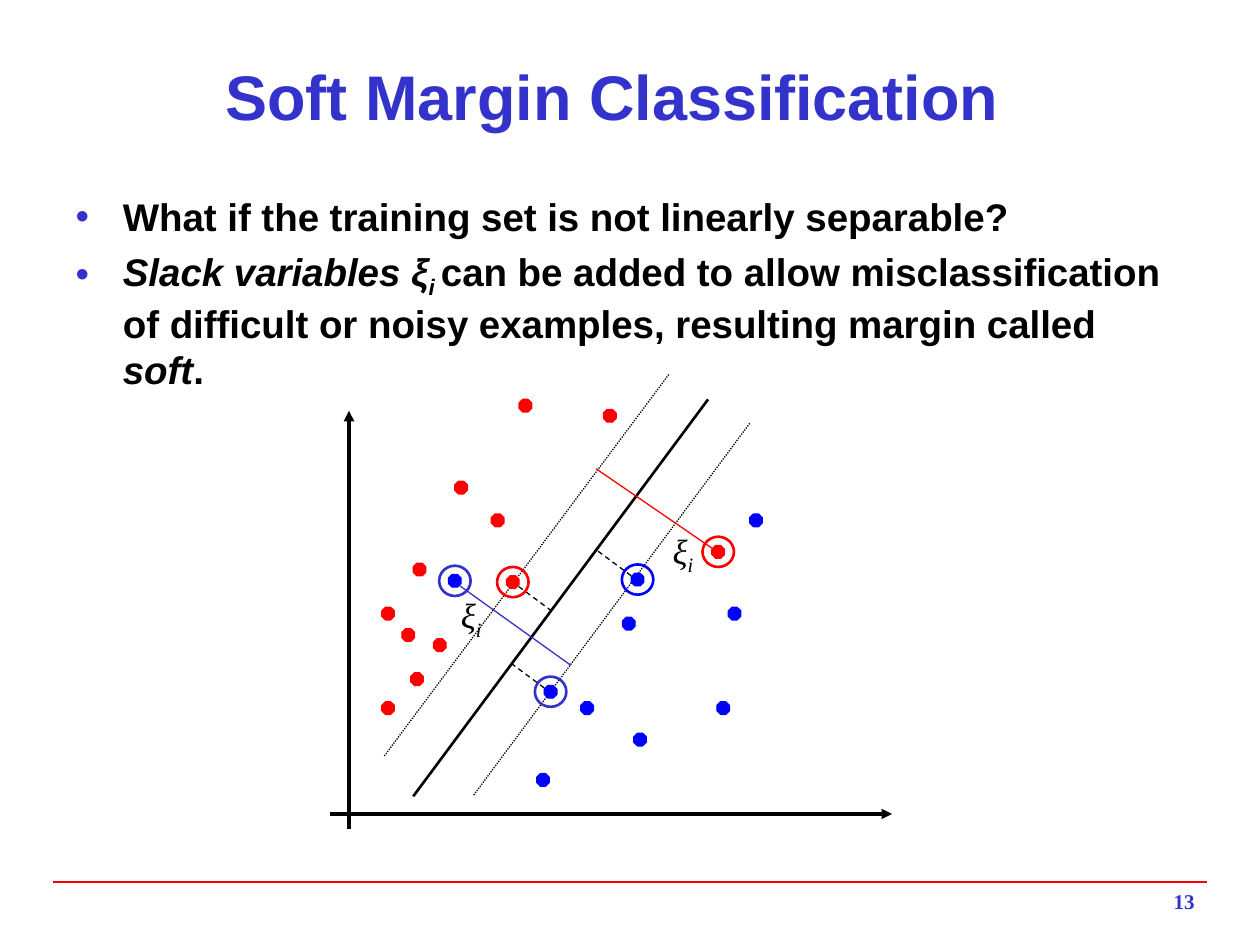
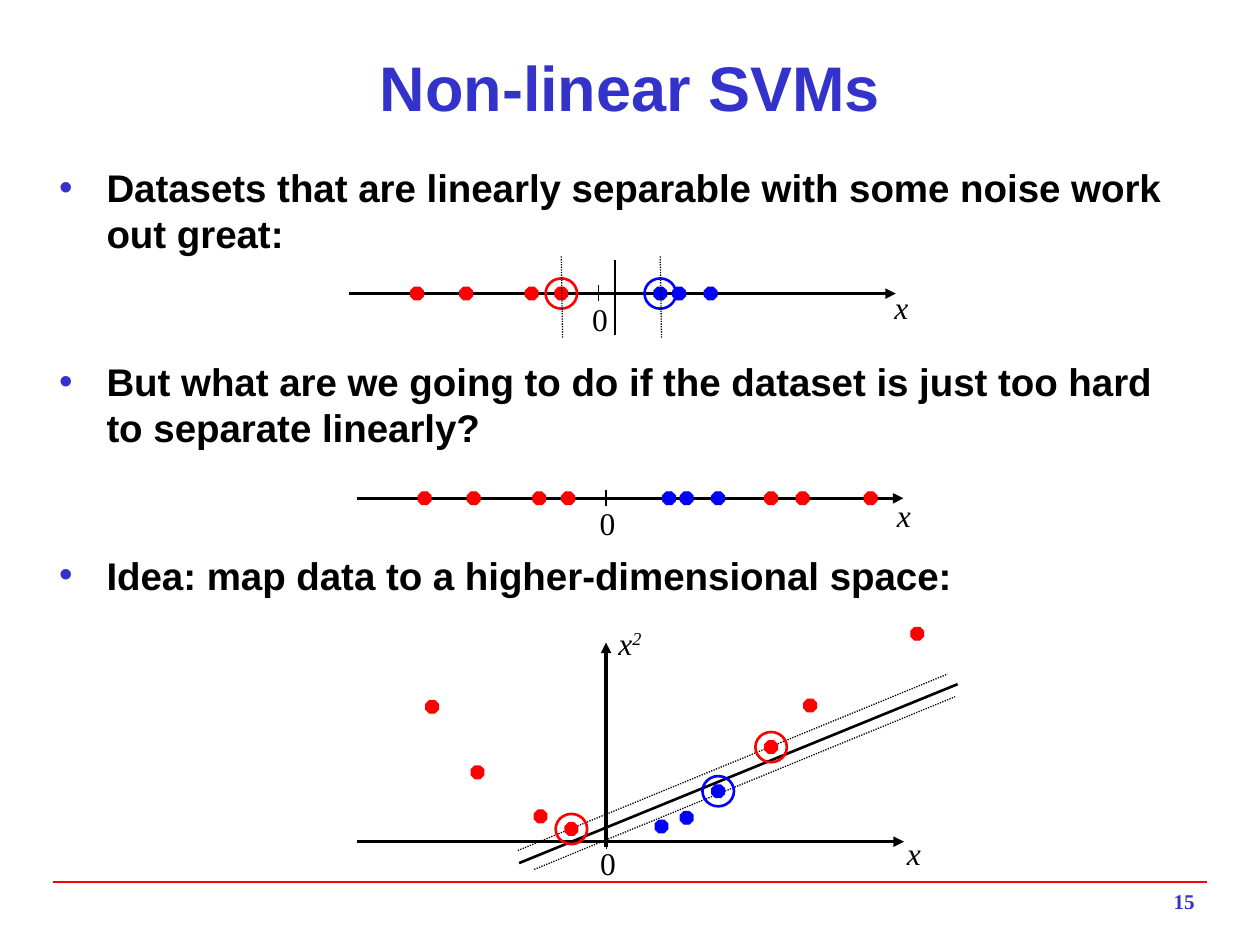
from lxml.etree import SubElement
from pptx import Presentation
from pptx.dml.color import RGBColor
from pptx.enum.dml import MSO_LINE
from pptx.enum.shapes import MSO_CONNECTOR, MSO_SHAPE
from pptx.enum.text import MSO_ANCHOR, MSO_AUTO_SIZE, PP_ALIGN
from pptx.oxml.ns import qn
from pptx.util import Inches, Pt

# The slide is a grid of 100 columns by 75 rows of square cells.
CELL = Inches(0.1)
COLS, ROWS = 100, 75
INDENT = 3.75

RED, BLUE, VIOLET, BLACK = "FF0000", "0000FF", "3333CC", "000000"
HEAD_FONT, MATH_FONT = "Arial", "Times New Roman"
DOT = 1
RING_W, RING_H = 2.5, 2.4


def cells(*counts):
    return [round(n * CELL) for n in counts]


def rgb(color):
    return RGBColor.from_string(color)


def write(p, text, font=MATH_FONT, size=18, color=BLACK, bold=False,
          italic=False, baseline=0):
    """Add one formatted run; baseline is a percentage."""
    r = p.add_run()
    r.text = text
    f = r.font
    f.name, f.size, f.bold, f.italic = font, Pt(size), bold, italic
    f.color.rgb = rgb(color)
    if baseline:
        r._r.get_or_add_rPr().set("baseline", str(baseline * 1000))


def add_label(s, x, y, w, h, runs, align=PP_ALIGN.LEFT, **fmt):
    """Text box made of (text, extra format) runs."""
    tf = s.shapes.add_textbox(*cells(x, y, w, h)).text_frame
    tf.word_wrap = True
    p = tf.paragraphs[0]
    p.alignment = align
    for text, extra in runs:
        write(p, text, **{**fmt, **extra})


def add_line(s, x1, y1, x2, y2, color=BLACK, width=0.75, dash=None,
             arrow=False):
    line = s.shapes.add_connector(MSO_CONNECTOR.STRAIGHT,
                                  *cells(x1, y1, x2, y2))
    line.line.color.rgb = rgb(color)
    line.line.width = Pt(width)
    if dash:
        line.line.dash_style = dash
    if arrow:
        SubElement(line.line._get_or_add_ln(), qn("a:tailEnd"),
                   type="triangle")
    SubElement(line.element.spPr, qn("a:effectLst"))
    return line


def add_axis(s, *ends):
    add_line(s, *ends, width=2, arrow=True)


def add_margin(s, *ends):
    add_line(s, *ends, dash=MSO_LINE.ROUND_DOT)


def add_mark(s, kind, x, y, w, h, color, width, filled):
    """Small shape centred on x, y."""
    sp = s.shapes.add_shape(kind, *cells(x - w / 2, y - h / 2, w, h))
    sp.shadow.inherit = False
    sp.line.color.rgb = rgb(color)
    sp.line.width = Pt(width)
    if filled:
        sp.fill.solid()
        sp.fill.fore_color.rgb = rgb(color)
    else:
        sp.fill.background()
    return sp


def add_dots(s, color, points):
    for x, y in points:
        sp = add_mark(s, MSO_SHAPE.OCTAGON, x, y, DOT, DOT, color, 0.75, True)
        sp.adjustments[0] = 0.293


def add_support(s, x, y, color, ring=None):
    """Data point with a ring round it."""
    add_dots(s, color, [(x, y)])
    add_mark(s, MSO_SHAPE.OVAL, x, y, RING_W, RING_H, ring or color, 1.5,
             False)


def add_slack(s, x, y):
    add_label(s, x, y, 7.7, 4.3, [("ξ", {}), ("i", {"baseline": -25})],
              size=20, italic=True)


def add_zero_axis(s, x, y, label_dx, label_dy, zero_dy=0):
    """Horizontal x axis with a tick at zero."""
    add_axis(s, x, y, x + 43.4, y)
    tick = x + 19.8
    add_line(s, tick, y - 0.65, tick, y + 0.6)
    add_label(s, tick - 1.5, y + zero_dy, 3.8, 4, [("0", {})])
    add_label(s, x + label_dx, y + label_dy, 5, 4, [("x", {"italic": True})])


def place(sp, x, y, w, h):
    sp.left, sp.top, sp.width, sp.height = cells(x, y, w, h)
    tf = sp.text_frame
    tf.auto_size = MSO_AUTO_SIZE.NONE
    tf.word_wrap = True
    return tf


def set_title(s, text, x, y):
    tf = place(s.shapes.title, x, y, 90, 6.7)
    tf.vertical_anchor = MSO_ANCHOR.MIDDLE
    p = tf.paragraphs[0]
    p.alignment = PP_ALIGN.CENTER
    write(p, text, HEAD_FONT, 36, VIOLET, bold=True)


def set_bullets(s, box, items, gap):
    """Fill the body; each item is a list of (text, extra format) runs."""
    tf = place(s.placeholders[1], *box)
    for i, runs in enumerate(items):
        p = tf.add_paragraph() if i else tf.paragraphs[0]
        p.space_before = Pt(gap if i else 0)
        pPr = p._p.get_or_add_pPr()
        indent, = cells(INDENT)
        pPr.set("marL", str(indent))
        pPr.set("indent", str(-indent))
        SubElement(SubElement(pPr, qn("a:buClr")), qn("a:srgbClr"), val=VIOLET)
        SubElement(pPr, qn("a:buFont"), typeface=HEAD_FONT)
        SubElement(pPr, qn("a:buChar"), char="•")
        for text, extra in runs:
            write(p, text, HEAD_FONT, 22, bold=True, **extra)


def add_page(prs, number):
    s = prs.slides.add_slide(prs.slide_layouts[1])
    add_label(s, 75, 70, 20.8, 3.3, [(number, {})], PP_ALIGN.RIGHT,
              size=12, color=VIOLET, bold=True)
    return s


def add_footer_rule(prs, s):
    """Draw the rule above the page number, then move it to the master."""
    rule = add_line(s, 4.2, 70, 95.8, 70, RED, 1)
    prs.slide_master.shapes.element.append(rule.element)


def draw_soft_margin(s):
    add_axis(s, 27.7, 65.8, 27.7, 32.6)
    add_axis(s, 26.2, 64.6, 70.8, 64.6)
    add_dots(s, RED, [(33.3, 45.2), (30.8, 56.2), (36.6, 38.7), (30.8, 48.7),
                      (32.4, 50.4), (34.9, 51.2), (39.5, 41.3), (41.7, 32.2),
                      (48.4, 33), (33.1, 53.9)])
    add_dots(s, BLUE, [(46.6, 56.2), (57.4, 56.2), (43.1, 61.9), (49.9, 49.5),
                       (50.8, 58.7), (58.3, 48.7), (60, 41.3)])
    add_line(s, 32.8, 63.2, 56.2, 31.7, width=1.5)
    for margin in [(37.6, 63.1, 59.5, 33.6), (30.5, 60, 53.1, 29.7)]:
        add_margin(s, *margin)
    for x, y in [(47.4, 43.7), (40.5, 52.6), (41.1, 46.5)]:
        add_line(s, x + 2.7, y + 2, x, y, dash=MSO_LINE.DASH)
    add_line(s, 56.5, 43.5, 47.3, 37.2, RED)
    add_line(s, 36.5, 46.5, 45.3, 52.8, VIOLET)
    add_slack(s, 52.4, 41.5)
    add_slack(s, 35.6, 46.6)
    add_support(s, 40.7, 46.2, RED)
    add_support(s, 57, 43.8, RED)
    add_support(s, 50.6, 46, BLUE)
    add_support(s, 43.7, 54.9, BLUE, VIOLET)
    add_support(s, 36.1, 46.1, BLUE, VIOLET)


def draw_separable_line(s):
    y = 23.3
    add_zero_axis(s, 27.7, y, 42.3, -0.9)
    add_dots(s, RED, [(x, y) for x in (33.1, 37, 42.2)])
    add_dots(s, BLUE, [(x, y) for x in (53.9, 56.4)])
    add_line(s, 48.8, 20.6, 48.8, 26.6, width=1.5)
    for x, color in [(44.55, RED), (52.4, BLUE)]:
        add_support(s, x, y, color)
        add_margin(s, x + 0.1, 26.8, x, 20.3)


def draw_hard_line(s):
    y = 39.55
    add_zero_axis(s, 28.3, y, 41.9, -0.65)
    add_dots(s, RED, [(x, y) for x in (33.7, 37.6, 42.8, 45.1, 61.2, 63.7,
                                       69.1)])
    add_dots(s, BLUE, [(x, y) for x in (53.1, 54.5, 57)])


def draw_mapped_plane(s):
    add_zero_axis(s, 28.35, 66.8, 42.65, -1.1, -0.3)
    add_axis(s, 48.1, 67.2, 48.1, 51)
    add_label(s, 48.1, 49, 5, 4, [("x", {}), ("2", {"baseline": 30})],
              italic=True)
    add_dots(s, RED, [(34.3, 56.1), (37.9, 61.3), (42.9, 64.8), (64.3, 56),
                      (72.8, 50.3)])
    add_dots(s, BLUE, [(54.5, 64.9), (52.5, 65.6)])
    add_line(s, 41.2, 68.5, 76, 54.3, width=1.5)
    for margin in [(41.1, 67.5, 75.2, 53.5), (42.4, 69, 75.8, 55.3)]:
        add_margin(s, *margin)
    for x, y, color in [(61.2, 59.3, RED), (57, 62.8, BLUE),
                        (45.35, 65.8, RED)]:
        add_support(s, x, y, color)


def main():
    prs = Presentation()
    prs.slide_width, prs.slide_height = cells(COLS, ROWS)

    s = add_page(prs, "13")
    add_footer_rule(prs, s)
    set_title(s, "Soft Margin Classification", 3.6, 4.2)
    italic = {"italic": True}
    set_bullets(s, (5, 14.8, 90, 55), [
        [("What if the training set is not linearly separable?", {})],
        [("Slack variables ξ", italic), ("i ", {**italic, "baseline": -25}),
         ("can be added to allow misclassification of difficult or noisy "
          "examples, resulting margin called ", {}),
         ("soft", italic), (".", {})],
    ], gap=5)
    draw_soft_margin(s)

    s = add_page(prs, "15")
    set_title(s, "Non-linear SVMs", 5, 3.5)
    set_bullets(s, (3.7, 12.5, 91.3, 59.7), [
        [("Datasets that are linearly separable with some noise work out "
          "great:", {})],
        [("But what are we going to do if the dataset is just too hard to "
          "separate linearly?", {})],
        [("Idea: map data to a higher-dimensional space:", {})],
    ], gap=58)
    draw_separable_line(s)
    draw_hard_line(s)
    draw_mapped_plane(s)

    prs.save("out.pptx")


if __name__ == "__main__":
    main()
